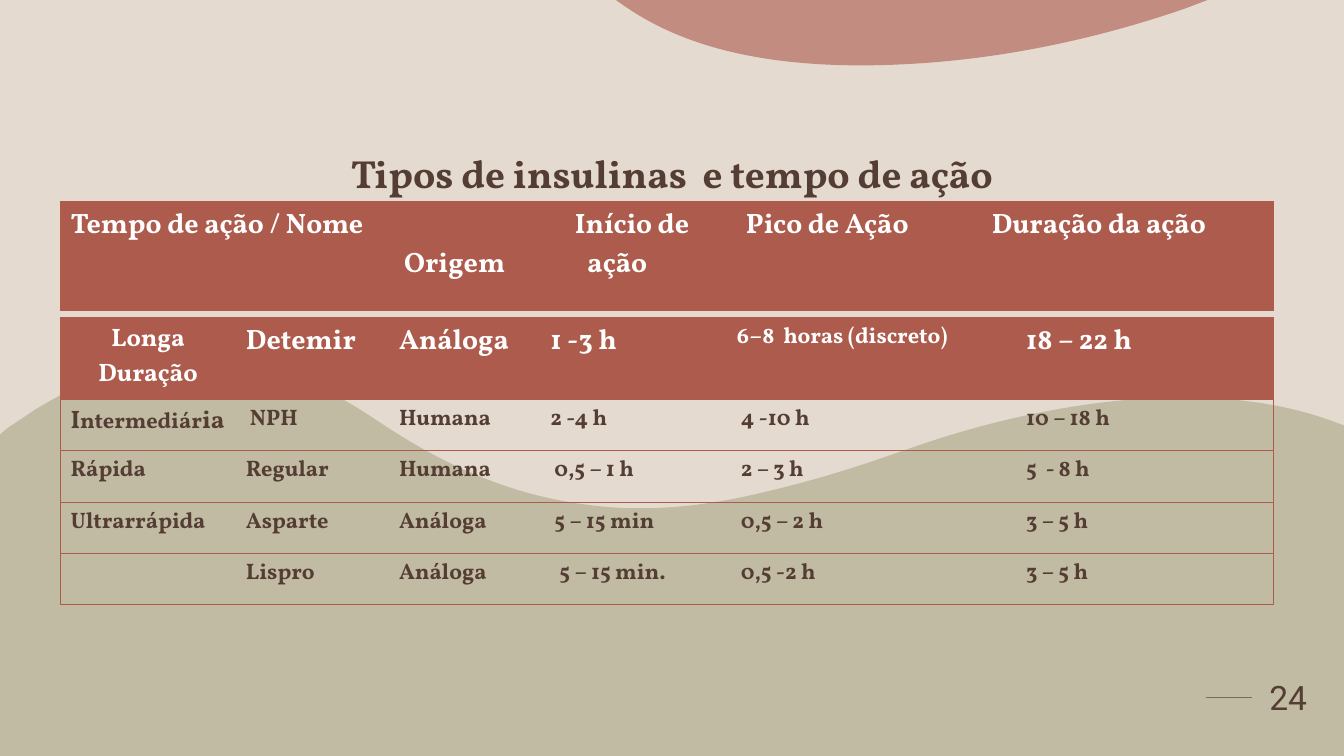
from dataclasses import dataclass

from lxml import etree
from pptx import Presentation
from pptx.dml.color import RGBColor
from pptx.enum.shapes import MSO_CONNECTOR
from pptx.enum.text import MSO_ANCHOR, PP_ALIGN
from pptx.oxml.ns import qn
from pptx.util import Inches, Length, Pt

SAND = RGBColor(0xE5, 0xDA, 0xCF)
BROWN = RGBColor(0x54, 0x3E, 0x34)
OLIVE = RGBColor(0xA0, 0x9D, 0x79)
BRICK = RGBColor(0xAC, 0x5B, 0x4C)
WHITE = RGBColor(0xFF, 0xFF, 0xFF)
LEFT, CENTER = PP_ALIGN.LEFT, PP_ALIGN.CENTER
TOP, MIDDLE, BOTTOM = MSO_ANCHOR.TOP, MSO_ANCHOR.MIDDLE, MSO_ANCHOR.BOTTOM
STRAIGHT = MSO_CONNECTOR.STRAIGHT
SERIF, SANS = "Vollkorn", "Roboto"
LEFT_SIDE = 1
COLUMNS, ROWS = 133.33, 75

Point = tuple[float, float]


@dataclass(frozen=True)
class Entry:
    """Cell text; indent and drop are grid units, spans pair text with its size."""
    spans: tuple[tuple[str, int], ...]
    indent: float = 0
    drop: float = 0
    align: PP_ALIGN = LEFT


@dataclass(frozen=True)
class Grid:
    top: float
    columns: tuple[float, ...]
    rows: tuple[float, ...]
    entries: tuple[tuple[Entry, ...], ...]


@dataclass(frozen=True)
class Label:
    text: str
    place: tuple[float, float, float, float]
    font: dict
    anchor: MSO_ANCHOR
    spacing: float


@dataclass(frozen=True)
class Wave:
    """Closed outline; a step of one point is a line, of three a cubic curve."""
    start: Point
    steps: tuple[tuple[Point, ...], ...]
    color: RGBColor
    opacity: int


def entry(text: str, size: int = 16, indent: float = 0, drop: float = 0,
          align: PP_ALIGN = LEFT) -> Entry:
    return Entry(((text, size),), indent, drop, align)


def record(kind: Entry, name: Entry, origin: str, onset: Entry, peak: str,
           duration: str) -> tuple[Entry, ...]:
    """One body row, with the indents shared by its last two columns."""
    return (kind, name, entry(origin), onset, entry(peak, indent=0.4),
            entry(duration, indent=1.7))


HEADER = Grid(20, (33.1, 13.2, 17.9, 27.2, 28.9), (10.8,), ((
    entry("Tempo de ação / Nome", 20),
    entry("Origem", 20, drop=3.9),
    entry("Início de ação", 20, indent=2.9, align=CENTER),
    entry("Pico de Ação", 20, indent=2.8),
    entry("Duração da ação", 20)),))

INSULINS = Grid(31.5, (17.4, 15.2, 15, 18.5, 27, 27.2), (8.1,) + (5.1,) * 4, (
    (entry("Longa Duração", 18, align=CENTER), entry("Detemir", 20),
     entry("Análoga", 20), entry("1 -3 h", 20),
     entry("6–8  horas (discreto)"), entry("18 – 22 h", 20, indent=1.7)),
    record(Entry((("I", 18), ("ntermediár", 16), ("ia", 18))),
           entry("NPH", indent=0.4), "Humana", entry("2 -4 h"),
           "4 -10 h", "10 – 18 h"),
    record(entry("Rápida"), entry("Regular"), "Humana",
           entry("0,5 – 1 h", indent=0.4), "2 – 3 h", "5  - 8 h"),
    record(entry("Ultrarrápida"), entry("Asparte"), "Análoga",
           entry("5 – 15 min", indent=0.4), "0,5 – 2 h", "3 – 5 h"),
    record(entry(""), entry("Lispro"), "Análoga",
           entry("5 – 15 min.", indent=0.9), "0,5 -2 h", "3 – 5 h")))

TITLE = Label("Tipos de insulinas  e tempo de ação", (10, 10, 113.3, 10),
              {"name": SERIF, "size": Pt(28), "bold": True}, BOTTOM, 0.9)
NUMBER = Label("24", (124.2, 64.3, 7.2, 9.8),
               {"name": SANS, "size": Pt(24), "bold": False}, MIDDLE, 1.0)

HILLS = Wave((20.2, 35.8), (
    ((23.6, 35.9), (27, 36.6), (30.4, 37.9)),
    ((33.4, 39), (36, 40.8), (38.6, 42.5)),
    ((44.3, 46.2), (50.5, 49), (57.7, 50)),
    ((63.7, 50.9), (69.8, 50.3), (75.9, 48.8)),
    ((82.7, 47.2), (86.7, 45.7), (90.8, 44.3)),
    ((94.8, 42.9), (116.1, 35.7), (132.5, 41.9)),
    ((COLUMNS, 42.2),), ((COLUMNS, ROWS),), ((0, ROWS),), ((0, 43.1),),
    ((0.7, 42.5),),
    ((1.6, 41.9), (2.5, 41.3), (3.4, 40.7)),
    ((9, 37.2), (14.6, 35.6), (20.2, 35.8))), OLIVE, 50)
CANOPY = Wave((61.1, 0), (
    ((119.8, 0),), ((117.7, 0.8),),
    ((105.6, 5), (96.1, 5.9), (92.4, 6.2)),
    ((75.6, 7.5), (67.1, 4.1), (62.1, 0.7))), BRICK, 60)


def unit(count: float) -> Length:
    """Length of that many tenth-of-an-inch grid columns or rows."""
    return Inches(count / 10)


def bend(shape, steps: tuple[tuple[Point, ...], ...]) -> None:
    """Turn the straight segments of three-point steps into cubic curves."""
    segments = list(shape._element.iter(qn("a:lnTo")))
    for segment, step in zip(segments, steps):
        if len(step) == 3:
            curve = etree.Element(qn("a:cubicBezTo"))
            for x, y in step:
                etree.SubElement(curve, qn("a:pt"), x=str(unit(x) - shape.left),
                                 y=str(unit(y) - shape.top))
            segment.getparent().replace(segment, curve)


def draw_wave(page, wave: Wave) -> None:
    knots = [wave.start] + [step[-1] for step in wave.steps]
    outline = [(unit(x), unit(y)) for x, y in knots]
    builder = page.shapes.build_freeform(*outline[0], scale=1.0)
    builder.add_line_segments(outline[1:], close=True)
    shape = builder.convert_to_shape()
    bend(shape, wave.steps)
    shape.shadow.inherit = False
    shape.line.fill.background()
    shape.fill.solid()
    shape.fill.fore_color.rgb = wave.color
    color = shape._element.spPr.find(f"{qn('a:solidFill')}/{qn('a:srgbClr')}")
    etree.SubElement(color, qn("a:alpha"), val=str(wave.opacity * 1000))


def add_span(para, text: str, color: RGBColor, font: dict) -> None:
    span = para.add_run()
    span.text = text
    span.font.color.rgb = color
    for name, value in font.items():
        setattr(span.font, name, value)


def draw_label(page, label: Label):
    box = page.shapes.add_textbox(*map(unit, label.place))
    frame = box.text_frame
    frame.word_wrap = True
    frame.vertical_anchor = label.anchor
    para = frame.paragraphs[0]
    para.alignment = CENTER
    para.line_spacing = label.spacing
    add_span(para, label.text, BROWN, label.font)
    return box


def set_borders(cell, first: bool, last: bool) -> None:
    """Rule the cell above and below, and on the table's outer sides."""
    properties = cell._tc.get_or_add_tcPr()
    sides = {"a:lnL": first, "a:lnR": last, "a:lnT": True, "a:lnB": True}
    for tag, ruled in sides.items():
        line = etree.SubElement(properties, qn(tag), w=str(Pt(0.5)))
        fill = etree.SubElement(line, qn("a:solidFill" if ruled else "a:noFill"))
        if ruled:
            etree.SubElement(fill, qn("a:srgbClr"), val=str(BRICK))


def fill_cell(cell, content: Entry, heading: bool) -> None:
    if heading:
        cell.fill.solid()
        cell.fill.fore_color.rgb = BRICK
    else:
        cell.fill.background()
    cell.vertical_anchor = TOP
    cell.margin_top = unit(0.5 + content.drop)
    para = cell.text_frame.paragraphs[0]
    para.alignment = content.align
    para._p.get_or_add_pPr().set("indent", str(unit(content.indent)))
    for text, size in content.spans:
        if text:
            add_span(para, text, WHITE if heading else BROWN,
                     {"name": SERIF, "size": Pt(size), "bold": True})


def draw_grid(page, grid: Grid) -> None:
    table = page.shapes.add_table(
        len(grid.rows), len(grid.columns), unit(6), unit(grid.top),
        unit(sum(grid.columns)), unit(sum(grid.rows))).table
    table.horz_banding = False
    for column, width in zip(table.columns, grid.columns):
        column.width = unit(width)
    for row, height in zip(table.rows, grid.rows):
        row.height = unit(height)
    for r, entries in enumerate(grid.entries):
        for c, content in enumerate(entries):
            cell = table.cell(r, c)
            set_borders(cell, c == 0, c == len(entries) - 1)
            fill_cell(cell, content, r == 0)


def main() -> None:
    deck = Presentation()
    deck.slide_width, deck.slide_height = unit(COLUMNS), unit(ROWS)
    page = deck.slides.add_slide(deck.slide_layouts[6])
    page.background.fill.solid()
    page.background.fill.fore_color.rgb = SAND
    dash = page.shapes.add_connector(
        STRAIGHT, unit(119.6), unit(69.2), unit(124.2), unit(69.2))
    dash.line.color.rgb = BROWN
    dash.line.width = Pt(1.25)
    etree.SubElement(dash._element.spPr, qn("a:effectLst"))
    for wave in (HILLS, CANOPY):
        draw_wave(page, wave)
    draw_label(page, TITLE)
    draw_grid(page, INSULINS)
    dash.end_connect(draw_label(page, NUMBER), LEFT_SIDE)
    draw_grid(page, HEADER)
    deck.save("out.pptx")


if __name__ == "__main__":
    main()
